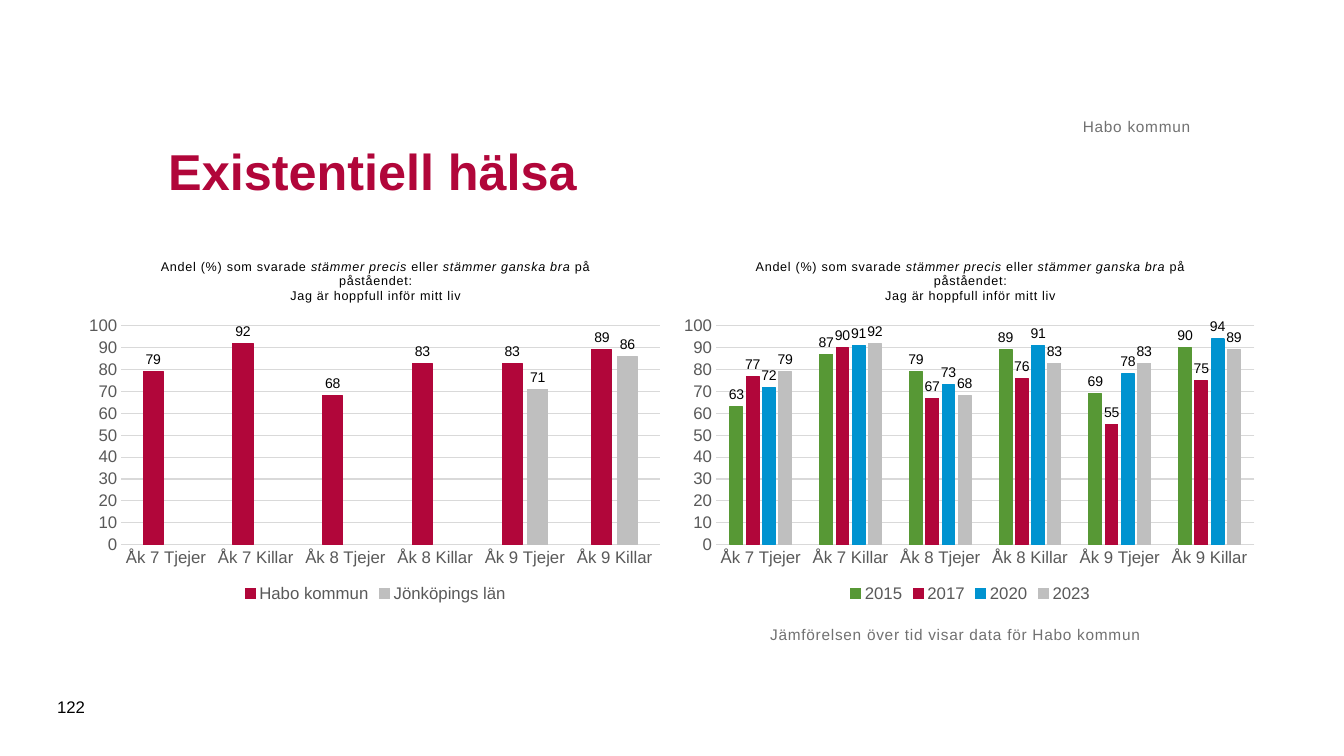
from lxml import etree
from pptx import Presentation
from pptx.chart import data as chart_data
from pptx.dml.color import RGBColor
from pptx.enum import chart as chart_enum, text as text_enum
from pptx.oxml import ns
from pptx.util import Cm, Pt

CRIMSON = RGBColor(0xB1, 0x06, 0x3A)
GREEN = RGBColor(0x57, 0x98, 0x35)
BLUE = RGBColor(0x00, 0x93, 0xD0)
SILVER = RGBColor(0xBF, 0xBF, 0xBF)
GRID = RGBColor(0xD9, 0xD9, 0xD9)
AXIS_GREY = RGBColor(0x59, 0x59, 0x59)
NOTE_GREY = RGBColor(0x71, 0x71, 0x71)
BLACK = RGBColor(0, 0, 0)
FONT = "Arial"
LETTER_SPACING = "50"

CATEGORIES = [f"Åk {grade} {group}" for grade in (7, 8, 9) for group in ("Tjejer", "Killar")]
HABO_2023 = [79, 92, 68, 83, 83, 89]
CHART_TITLE = [
    [("Andel (%) som svarade ", False), ("stämmer precis", True), (" eller ", False),
     ("stämmer ganska bra", True), (" på påståendet:", False)],
    [("Jag är hoppfull inför mitt liv", False)],
]
CHARTS = [
    ("#,##0;#,##0", [
        ("Habo kommun", HABO_2023, CRIMSON),
        ("Jönköpings län", [None, None, None, None, 71, 86], SILVER),
    ]),
    ("#,##0", [
        ("2015", [63, 87, 79, 89, 69, 90], GREEN),
        ("2017", [77, 90, 67, 76, 55, 75], CRIMSON),
        ("2020", [72, 91, 73, 91, 78, 94], BLUE),
        ("2023", HABO_2023, SILVER),
    ]),
]
CHART_LEFT, CHART_TOP, CHART_WIDTH, CHART_HEIGHT = 2.01, 6.1, 14.91, 9.19
CHART_PITCH = 14.99
PLOT_AREA = {"x": 0.07, "y": 0.23, "w": 0.91, "h": 0.6}

MIDDLE, BOTTOM, TOP = (text_enum.MSO_ANCHOR.MIDDLE, text_enum.MSO_ANCHOR.BOTTOM,
                       text_enum.MSO_ANCHOR.TOP)
LEFT, RIGHT = text_enum.PP_ALIGN.LEFT, text_enum.PP_ALIGN.RIGHT
TEXTS = [
    ("Existentiell hälsa", (3.99, 2.49, 26.01, 3.61), 36, CRIMSON, True, MIDDLE, LEFT, False),
    ("Jämförelsen över tid visar data för Habo kommun", (19.41, 15.75, 13.49, 2.39),
     11, NOTE_GREY, False, TOP, LEFT, True),
    ("Habo kommun", (3.99, 1.57, 26.01, 1.85), 11, NOTE_GREY, False, BOTTOM, RIGHT, True),
    ("122", (1.19, 17.3, 1.45, 1.02), 12, BLACK, False, MIDDLE, LEFT, False),
]


def style_font(font, size, color, bold=False):
    font.name, font.size, font.bold = FONT, Pt(size), bold
    font.color.rgb = color


def space_letters(run):
    run._r.get_or_add_rPr().set("spc", LETTER_SPACING)


def style_line(line, color):
    line.color.rgb = color
    line.width = Pt(0.75)


def add_title(chart):
    frame = chart.chart_title.text_frame
    chart.chart_title.include_in_layout = False
    for index, parts in enumerate(CHART_TITLE):
        paragraph = frame.add_paragraph() if index else frame.paragraphs[0]
        for words, italic in parts:
            run = paragraph.add_run()
            run.text = words
            style_font(run.font, 9, BLACK)
            run.font.italic = italic
            space_letters(run)


def place_plot(chart):
    plot_area = chart._chartSpace.chart.plotArea
    for old_layout in plot_area.findall(ns.qn("c:layout")):
        plot_area.remove(old_layout)
    layout = etree.Element(ns.qn("c:layout"))
    manual = etree.SubElement(layout, ns.qn("c:manualLayout"))
    settings = {"layoutTarget": "inner", "xMode": "edge", "yMode": "edge", **PLOT_AREA}
    for tag, value in settings.items():
        etree.SubElement(manual, ns.qn(f"c:{tag}")).set("val", str(value))
    plot_area.insert(0, layout)


def style_axes(chart):
    for axis in (chart.category_axis, chart.value_axis):
        axis.major_tick_mark = axis.minor_tick_mark = chart_enum.XL_TICK_MARK.NONE
        style_font(axis.tick_labels.font, 12, AXIS_GREY)
    style_line(chart.category_axis.format.line, GRID)
    values = chart.value_axis
    values.minimum_scale, values.maximum_scale, values.major_unit = 0, 100, 10
    values.format.line.fill.background()
    style_line(values.major_gridlines.format.line, GRID)
    values.tick_labels.number_format = "#,##0;#,##0"
    values.tick_labels.number_format_is_linked = False


def add_column_chart(slide, left, label_format, series_list):
    data = chart_data.CategoryChartData()
    data.categories = CATEGORIES
    for name, values, _ in series_list:
        data.add_series(name, values)
    chart = slide.shapes.add_chart(
        chart_enum.XL_CHART_TYPE.COLUMN_CLUSTERED, Cm(left), Cm(CHART_TOP),
        Cm(CHART_WIDTH), Cm(CHART_HEIGHT), data).chart
    style_font(chart.font, 10, BLACK)
    add_title(chart)
    place_plot(chart)
    style_axes(chart)
    chart.has_legend = True
    chart.legend.position = chart_enum.XL_LEGEND_POSITION.BOTTOM
    chart.legend.include_in_layout = False
    style_font(chart.legend.font, 12, AXIS_GREY)
    plot = chart.plots[0]
    plot.gap_width, plot.overlap, plot.vary_by_categories = 219, -27, False
    for series, (_, _, color) in zip(plot.series, series_list):
        series.format.fill.solid()
        series.format.fill.fore_color.rgb = color
        style_line(series.format.line, color)
        labels = series.data_labels
        labels.show_value = True
        labels.position = chart_enum.XL_LABEL_POSITION.OUTSIDE_END
        labels.number_format = label_format
        labels.number_format_is_linked = False
        style_font(labels.font, 10, BLACK)


def add_text(slide, words, box, size, color, bold, anchor, alignment, is_note):
    frame = slide.shapes.add_textbox(*map(Cm, box)).text_frame
    frame.word_wrap = True
    frame.vertical_anchor = anchor
    paragraph = frame.paragraphs[0]
    paragraph.alignment = alignment
    run = paragraph.add_run()
    run.text = words
    style_font(paragraph.font, size, color, bold)
    if is_note:
        frame.margin_left = frame.margin_right = frame.margin_top = frame.margin_bottom = 0
        space_letters(run)


def main():
    presentation = Presentation()
    presentation.slide_width, presentation.slide_height = Cm(33.87), Cm(19.05)
    slide = presentation.slides.add_slide(presentation.slide_layouts[6])
    for index, (label_format, series_list) in enumerate(CHARTS):
        add_column_chart(slide, CHART_LEFT + index * CHART_PITCH, label_format, series_list)
    for item in TEXTS:
        add_text(slide, *item)
    presentation.save("out.pptx")


if __name__ == "__main__":
    main()
